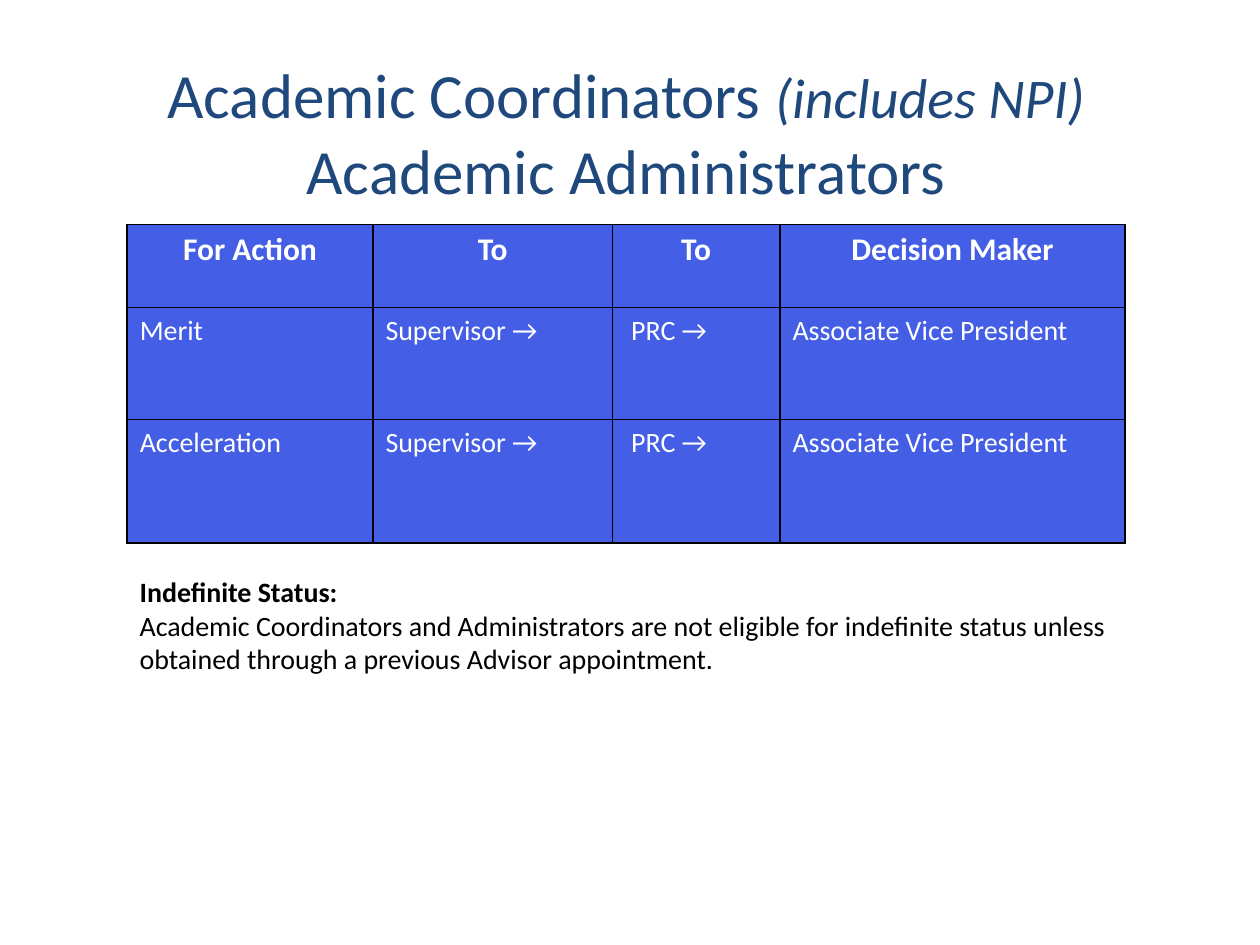
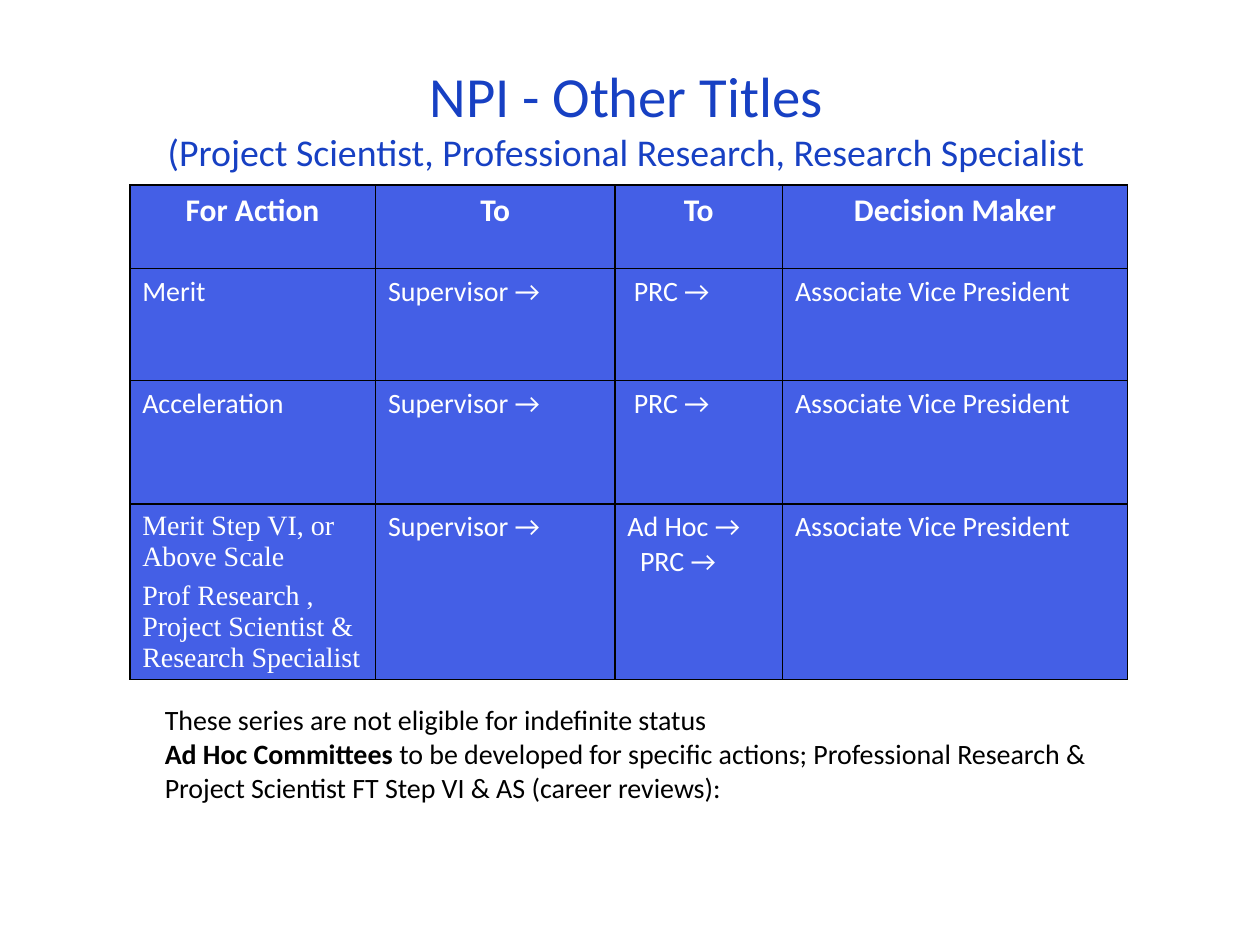
from dataclasses import dataclass

from lxml.etree import SubElement
from pptx import Presentation
from pptx.dml.color import RGBColor
from pptx.enum.text import MSO_ANCHOR, MSO_AUTO_SIZE, PP_ALIGN
from pptx.oxml.ns import qn
from pptx.util import Inches, Pt


@dataclass(frozen=True)
class Theme:
    body_font: str = "Calibri"
    serif_font: str = "Times New Roman"
    navy: str = "1F497D"
    royal: str = "1740C3"
    cell_blue: str = "445FE6"
    white: str = "FFFFFF"
    black: str = "000000"
    header_size: float = 18
    body_size: float = 16
    paragraph_gap: float = 4.3
    border_width: float = 1


THEME = Theme()
SLIDE_WIDTH, SLIDE_HEIGHT = Inches(10), Inches(7.5)

# Lengths are percentages of the slide's width or height
TITLE_BOX = (10.1, 4, 79.2, 19.73)
TABLE_COLUMNS = (19.5, 19, 13.3, 27.4)
HEADER_ROW, MERIT_ROW, ACCELERATION_ROW, CAREER_ROW = 8.8, 11.87, 13.07, 18.53
PRC_INDENT = 0.5

HEADINGS = ("For Action", "To", "To", "Decision Maker")
SUPERVISOR, PRC, DECISION_MAKER = "Supervisor →", "PRC →", "Associate Vice President"


def across(percent):
    return round(SLIDE_WIDTH * percent / 100)


def down(percent):
    return round(SLIDE_HEIGHT * percent / 100)


def place(left, top, width, height):
    return across(left), down(top), across(width), down(height)


def style_run(run, size, color, font=THEME.body_font, bold=False, italic=False):
    run.font.name = font
    run.font.size = Pt(size)
    run.font.color.rgb = RGBColor.from_string(color)
    run.font.bold = bold
    run.font.italic = italic


def indent(paragraph, percent):
    properties = paragraph._p.get_or_add_pPr()
    properties.set("marL", str(across(percent)))
    properties.set("indent", "0")


def add_title(slide, lines, color, bottom_inset=0.67):
    """Each line is a list of (text, size, italic) runs."""
    title = slide.shapes.title
    title.left, title.top, title.width, title.height = place(*TITLE_BOX)
    text_frame = title.text_frame
    text_frame.auto_size = MSO_AUTO_SIZE.NONE
    text_frame.word_wrap = True
    text_frame.vertical_anchor = MSO_ANCHOR.MIDDLE
    text_frame.margin_bottom = down(bottom_inset)
    paragraph = text_frame.paragraphs[0]
    paragraph.alignment = PP_ALIGN.CENTER
    for number, line in enumerate(lines):
        if number:
            paragraph.add_line_break()
        for text, size, italic in line:
            run = paragraph.add_run()
            run.text = text
            style_run(run, size, color, italic=italic)


def add_borders(cell):
    properties = cell._tc.get_or_add_tcPr()
    for position, side in enumerate(("lnL", "lnR", "lnT", "lnB")):
        line = SubElement(properties, qn(f"a:{side}"), w=str(Pt(THEME.border_width)))
        fill = SubElement(line, qn("a:solidFill"))
        SubElement(fill, qn("a:srgbClr"), val=THEME.black)
        properties.insert(position, line)


def fill_cell(cell, text, is_header, font):
    cell.fill.solid()
    cell.fill.fore_color.rgb = RGBColor.from_string(THEME.cell_blue)
    add_borders(cell)
    cell.text_frame.text = text
    size = THEME.header_size if is_header else THEME.body_size
    for number, paragraph in enumerate(cell.text_frame.paragraphs):
        if is_header:
            paragraph.alignment = PP_ALIGN.CENTER
        if paragraph.text == PRC:
            indent(paragraph, PRC_INDENT * (number + 1))
        elif number:
            paragraph.space_before = Pt(THEME.paragraph_gap)
        for run in paragraph.runs:
            style_run(run, size, THEME.white, font, bold=is_header)


def add_review_table(slide, left, top, actions):
    """Each action is (name, reviewer, row height, font of the name)."""
    rows = [(HEADINGS, HEADER_ROW, THEME.body_font)]
    for name, reviewer, height, font in actions:
        rows.append(((name, SUPERVISOR, reviewer, DECISION_MAKER), height, font))
    total_height = sum(height for _, height, _ in rows)
    frame = slide.shapes.add_table(
        len(rows), len(TABLE_COLUMNS),
        *place(left, top, sum(TABLE_COLUMNS), total_height))
    table = frame.table
    for column, width in zip(table.columns, TABLE_COLUMNS):
        column.width = across(width)
    for row_number, (texts, height, first_font) in enumerate(rows):
        table.rows[row_number].height = down(height)
        for column_number, text in enumerate(texts):
            font = THEME.body_font if column_number else first_font
            fill_cell(table.cell(row_number, column_number), text,
                      row_number == 0, font)


def add_note(slide, box, paragraphs):
    """Each paragraph is a list of (text, bold) runs."""
    text_frame = slide.shapes.add_textbox(*place(*box)).text_frame
    text_frame.word_wrap = True
    text_frame.auto_size = MSO_AUTO_SIZE.SHAPE_TO_FIT_TEXT
    for number, runs in enumerate(paragraphs):
        paragraph = text_frame.add_paragraph() if number else text_frame.paragraphs[0]
        for text, bold in runs:
            run = paragraph.add_run()
            run.text = text
            style_run(run, THEME.body_size, THEME.black, bold=bold)


def main():
    presentation = Presentation()
    presentation.slide_width, presentation.slide_height = SLIDE_WIDTH, SLIDE_HEIGHT
    title_only = presentation.slide_layouts.get_by_name("Title Only")
    common_actions = [
        ("Merit", PRC, MERIT_ROW, THEME.body_font),
        ("Acceleration", PRC, ACCELERATION_ROW, THEME.body_font),
    ]

    # Coordinators and administrators
    slide = presentation.slides.add_slide(title_only)
    add_title(slide, [
        [("Academic Coordinators ", 36, False), ("(includes NPI)", 32, True)],
        [("Academic Administrators", 36, False)],
    ], THEME.navy)
    add_review_table(slide, 10.1, 23.73, common_actions)
    add_note(slide, (10.1, 60.13, 79.2, 12.13), [
        [("Indefinite Status:", True)],
        [("Academic Coordinators and Administrators are not eligible for indefinite "
          "status unless obtained through a previous Advisor appointment.", False)],
    ])

    # Other titles, with career reviews
    slide = presentation.slides.add_slide(title_only)
    add_title(slide, [
        [("NPI - Other Titles", 32.4, False)],
        [("(Project Scientist, Professional Research, Research Specialist", 21.6, False)],
    ], THEME.royal, bottom_inset=3.6)
    career_review = (
        "Merit Step VI, or Above Scale\n"
        "Prof Research , Project Scientist & Research Specialist",
        f"Ad Hoc →\n{PRC}", CAREER_ROW, THEME.serif_font)
    add_review_table(slide, 10.3, 19.6, common_actions + [career_review])
    add_note(slide, (12.1, 73.73, 75.7, 12.13), [
        [("These series are not eligible for indefinite status", False)],
        [("Ad Hoc Committees ", True),
         ("to be developed for specific actions; Professional Research & "
          "Project Scientist FT Step VI & AS (career reviews):", False)],
    ])

    presentation.save("out.pptx")


if __name__ == "__main__":
    main()
